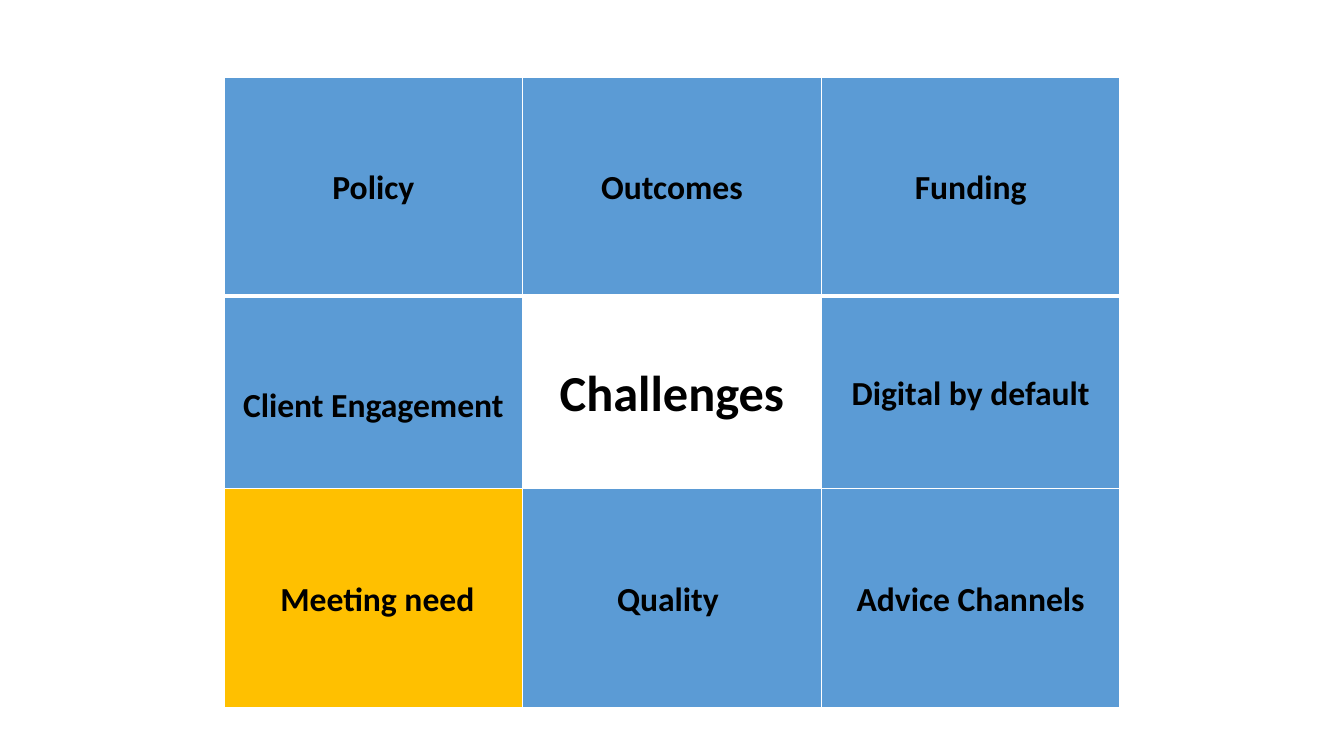
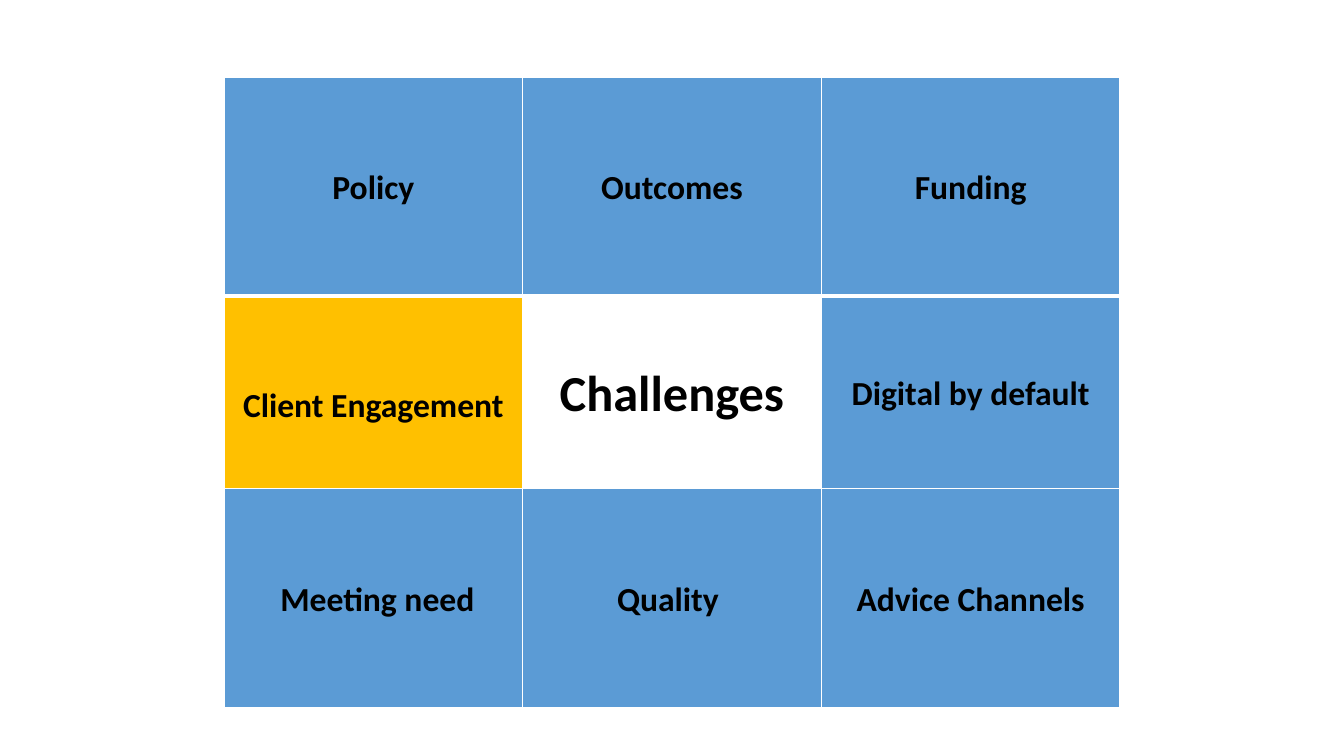
from pptx import Presentation
from pptx.dml.color import RGBColor as RGB
from pptx.enum.text import MSO_ANCHOR as ANCHOR, PP_ALIGN as ALIGN
from pptx.oxml.ns import qn
from pptx.util import Inches, Pt
from lxml.etree import SubElement

# Shared colours and text formats
BLUE = RGB(0x5B, 0x9B, 0xD5)
AMBER = RGB(0xFF, 0xC0, 0x00)
WHITE = RGB(0xFF, 0xFF, 0xFF)
BLACK = RGB(0x00, 0x00, 0x00)
TOPIC_FONT = {"name": "Calibri", "size": Pt(24), "bold": True}
CENTRE_FONT = {**TOPIC_FONT, "size": Pt(36)}

# Grid: two thirds of the slide's width, in three equal columns
SLIDE_W, SLIDE_H = Inches(13.33), Inches(7.5)
GRID_LEFT, GRID_TOP = SLIDE_W // 6, Inches(0.77)
COL_W = SLIDE_W * 2 // 9
ROW_HEIGHTS = [Inches(h) for h in (2.17, 1.91, 2.17)]
THIN, THICK = Pt(1), Pt(3)

CENTRE = "Challenges"
TOPICS = [
    ["Policy", "Outcomes", "Funding"],
    ["Client Engagement", CENTRE, "Digital by default"],
    ["Meeting need", "Quality", "Advice Channels"],
]
MARGINS = {"margin_left": Inches(0.06), "margin_right": Inches(0.06),
           "margin_top": 0, "margin_bottom": 0}
# Labels that sit a little off the middle of their cell
NUDGES = {
    "Client Engagement": {"margin_top": Inches(0.23)},
    "Meeting need": {"margin_left": Inches(0.14)},
    "Quality": {"margin_right": Inches(0.14)},
}
HIGHLIGHTS = ["Meeting need", "Client Engagement"]


def set_attrs(obj, values):
    for name, value in values.items():
        setattr(obj, name, value)


def add_borders(cell, row):
    """White rules, thicker below the first row."""
    widths = {"L": THIN, "R": THIN,
              "T": THICK if row == 1 else THIN,
              "B": THICK if row == 0 else THIN}
    tc_pr = cell._tc.get_or_add_tcPr()
    for side, width in widths.items():
        ln = SubElement(tc_pr, qn(f"a:ln{side}"), w=str(width))
        fill = SubElement(ln, qn("a:solidFill"))
        SubElement(fill, qn("a:srgbClr"), val=str(WHITE))


def fill_cell(cell, row, label, color):
    add_borders(cell, row)
    cell.fill.solid()
    cell.fill.fore_color.rgb = color
    set_attrs(cell, {**MARGINS, **NUDGES.get(label, {}),
                     "vertical_anchor": ANCHOR.MIDDLE})
    p = cell.text_frame.paragraphs[0]
    set_attrs(p, {"alignment": ALIGN.CENTER, "line_spacing": 1.07})
    r = p.add_run()
    r.text = label
    set_attrs(r.font, CENTRE_FONT if label == CENTRE else TOPIC_FONT)
    r.font.color.rgb = BLACK


def add_topic_grid(slide, highlight):
    table = slide.shapes.add_table(
        len(TOPICS), len(TOPICS[0]), GRID_LEFT, GRID_TOP,
        COL_W * len(TOPICS[0]), sum(ROW_HEIGHTS)).table
    set_attrs(table, {"first_row": False, "horz_banding": False})
    for col in table.columns:
        col.width = COL_W
    colors = {CENTRE: WHITE, highlight: AMBER}
    for i, labels in enumerate(TOPICS):
        table.rows[i].height = ROW_HEIGHTS[i]
        for j, label in enumerate(labels):
            fill_cell(table.cell(i, j), i, label, colors.get(label, BLUE))


def main():
    prs = Presentation()
    set_attrs(prs, {"slide_width": SLIDE_W, "slide_height": SLIDE_H})
    blank = prs.slide_layouts[6]
    # One slide for each highlighted topic
    for highlight in HIGHLIGHTS:
        add_topic_grid(prs.slides.add_slide(blank), highlight)
    prs.save("out.pptx")


if __name__ == "__main__":
    main()
